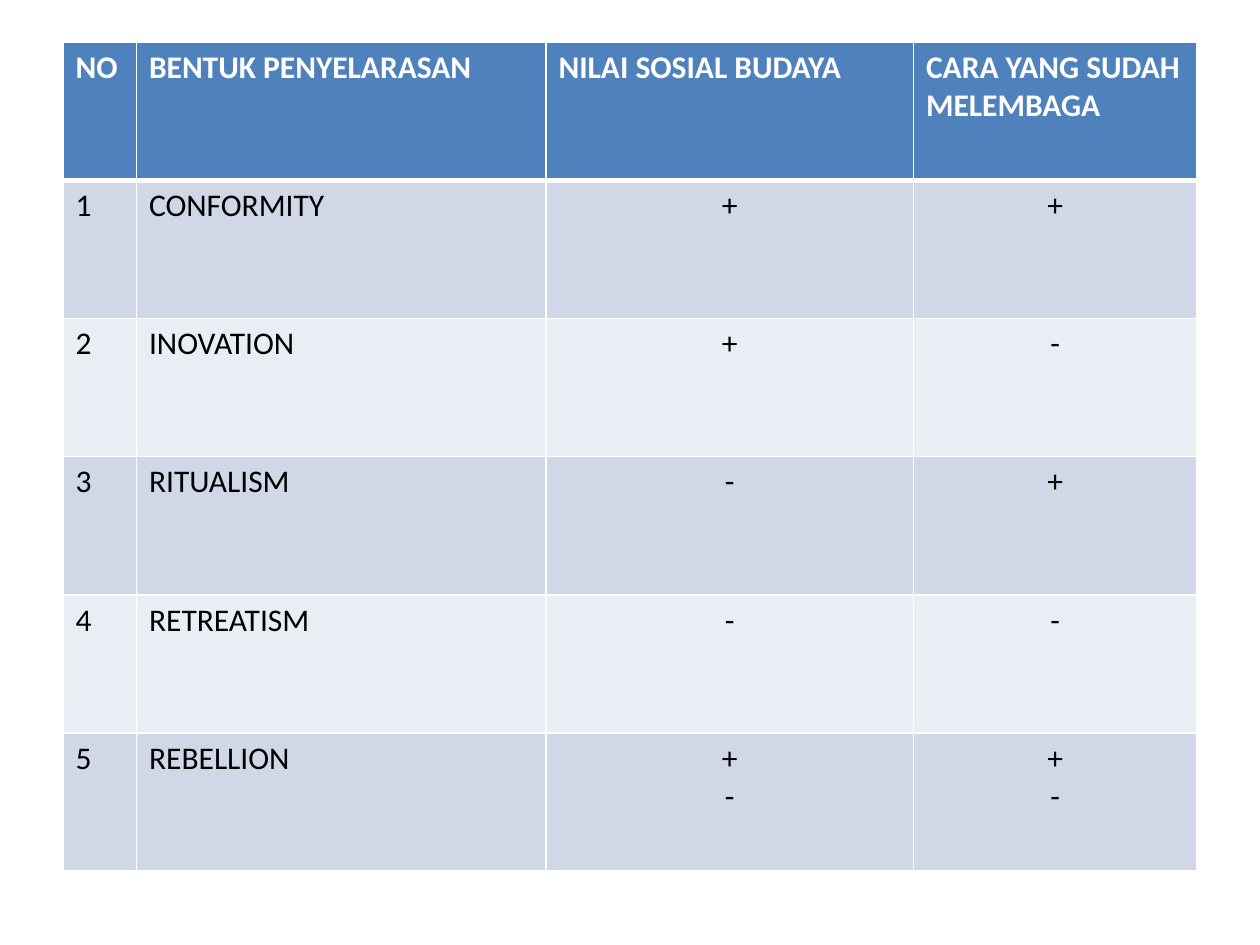
import lxml.etree
import pptx
import pptx.dml.color
import pptx.enum.text
import pptx.oxml.ns
import pptx.util

Pt = pptx.util.Pt
RGBColor = pptx.dml.color.RGBColor
qn = pptx.oxml.ns.qn
CENTER = pptx.enum.text.PP_ALIGN.CENTER

WHITE = RGBColor(0xFF, 0xFF, 0xFF)
BLACK = RGBColor(0, 0, 0)
HEADER_BLUE = RGBColor(0x4F, 0x81, 0xBD)
BAND_DARK = RGBColor(0xD0, 0xD8, 0xE8)
BAND_LIGHT = RGBColor(0xE9, 0xED, 0xF4)

COLUMN_WIDTHS = [42, 234, 210, 162]
ROW_HEIGHT = 79
ROWS = [
    ["NO", "BENTUK PENYELARASAN", "NILAI SOSIAL BUDAYA", "CARA YANG SUDAH MELEMBAGA"],
    ["1", "CONFORMITY", "+", "+"],
    ["2", "INOVATION", "+", "-"],
    ["3", "RITUALISM", "-", "+"],
    ["4", "RETREATISM", "-", "-"],
    ["5", "REBELLION", "+\n-", "+\n-"],
]


def add_border(cell, side, width):
    """Add a white border; call before the cell's fill is set."""
    properties = cell._tc.get_or_add_tcPr()
    line = lxml.etree.SubElement(properties, qn(f"a:ln{side}"), w=str(Pt(width)))
    fill = lxml.etree.SubElement(line, qn("a:solidFill"))
    lxml.etree.SubElement(fill, qn("a:srgbClr"), val=str(WHITE))


deck = pptx.Presentation()
deck.slide_width, deck.slide_height = Pt(720), Pt(540)
page = deck.slides.add_slide(deck.slide_layouts[6])

table = page.shapes.add_table(
    len(ROWS), len(COLUMN_WIDTHS), Pt(36), Pt(24),
    Pt(sum(COLUMN_WIDTHS)), Pt(ROW_HEIGHT * len(ROWS)),
).table
for column, width in zip(table.columns, COLUMN_WIDTHS):
    column.width = Pt(width)

for row_index, texts in enumerate(ROWS):
    table.rows[row_index].height = Pt(ROW_HEIGHT)
    is_header = row_index == 0
    if is_header:
        fill_color = HEADER_BLUE
    else:
        fill_color = BAND_DARK if row_index % 2 else BAND_LIGHT

    for column_index, text in enumerate(texts):
        cell = table.cell(row_index, column_index)
        add_border(cell, "L", 1)
        add_border(cell, "R", 1)
        add_border(cell, "T", 3 if row_index == 1 else 1)
        add_border(cell, "B", 3 if is_header else 1)
        cell.fill.solid()
        cell.fill.fore_color.rgb = fill_color

        cell.text = text
        for para in cell.text_frame.paragraphs:
            if not is_header and column_index >= 2:
                para.alignment = CENTER
            para.font.name = "Calibri"
            para.font.size = Pt(18)
            para.font.bold = is_header
            para.font.color.rgb = WHITE if is_header else BLACK

deck.save("out.pptx")
